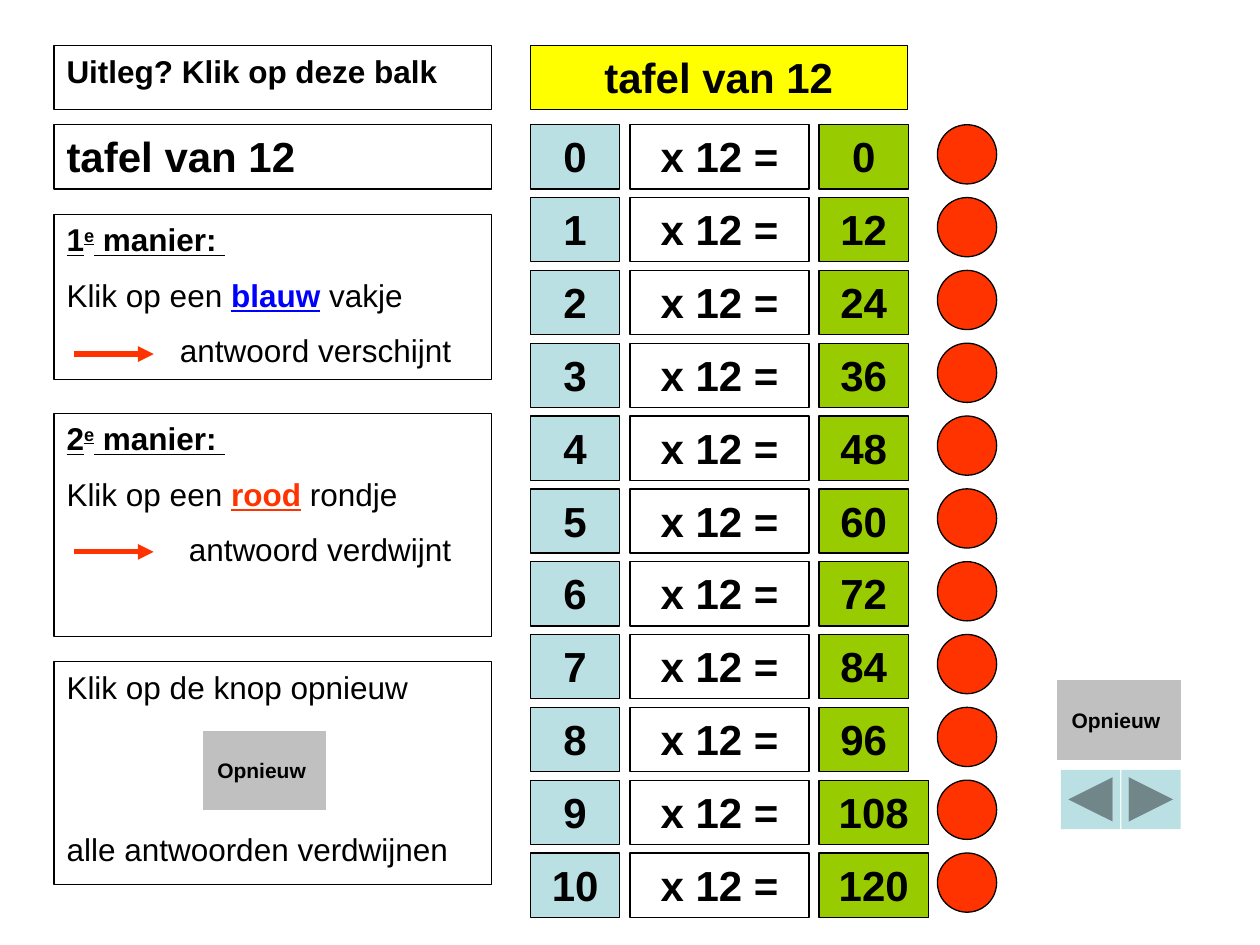
import pptx
import pptx.util
import pptx.dml.color
import pptx.enum.shapes
import pptx.enum.text
import pptx.oxml

Inches, Pt = pptx.util.Inches, pptx.util.Pt
KIND = pptx.enum.shapes.MSO_SHAPE
ALIGN = pptx.enum.text.PP_ALIGN
ANCHOR = pptx.enum.text.MSO_ANCHOR

COLORS = {"black": "000000", "white": "FFFFFF", "blue": "0000FF", "red": "FF3300",
          "green": "99CC00", "pale": "BBE0E3", "yellow": "FFFF00", "gray": "C0C0C0"}

TABLE = 12
HEAD = f"tafel van {TABLE}"
LEFT, WIDE = 0.43, 3.47
TOP, STEP, HIGH = 0.99, 0.578, 0.51
GAP = 10  # points between paragraphs
DOT = 0.47

# A paragraph is (indent in inches, space before in points, runs);
# a run is (text, marks, colour), with marks b, u and ^ for superscript.
def steps(number, word, color, noun, indent, result):
    return [(0, 0, [(number, "bu", "black"), ("e", "bu^", "black"),
                    (" manier: ", "bu", "black")]),
            (0, GAP, [("Klik op een ", "", "black"), (word, "bu", color),
                      (f" {noun}", "", "black")]),
            (indent, GAP, [(result, "", "black")])]


# top, height, text size, paragraphs
PANELS = [
    (0.36, HIGH, 18, [(0, 0, [("Uitleg? Klik op deze balk", "b", "black")])]),
    (TOP, HIGH, 24, [(0, 0, [(HEAD, "b", "black")])]),
    (1.7, 1.31, 18, steps("1", "blauw", "blue", "vakje", 0.9, "antwoord verschijnt")),
    (3.28, 1.77, 18, steps("2", "rood", "red", "rondje", 0.97, "antwoord verdwijnt")),
    (5.25, 1.77, 18, [(0, 0, [("Klik op de knop opnieuw", "", "black")]),
                      (0, 71, [("alle antwoorden verdwijnen", "", "black")])]),
]
ARROWS = [2.81, 4.38]
RESETS = [(1.61, 5.8), (8.39, 5.4)]
MOVES = [(8.42, KIND.ACTION_BUTTON_BACK_OR_PREVIOUS),
         (8.9, KIND.ACTION_BUTTON_FORWARD_OR_NEXT)]


def rgb(name):
    return pptx.dml.color.RGBColor.from_string(COLORS[name])


def paint(shape, fill, line="black"):
    if fill:
        shape.fill.solid()
        shape.fill.fore_color.rgb = rgb(fill)
    else:
        shape.fill.background()
    if line:
        shape.line.color.rgb = rgb(line)
        shape.line.width = Pt(0.75)
    else:
        shape.line.fill.background()


def style(run, size, marks="b", color="black"):
    font = run.font
    font.name, font.size = "Arial", Pt(size)
    font.bold, font.underline = "b" in marks, "u" in marks
    font.color.rgb = rgb(color)
    if "^" in marks:
        run._r.get_or_add_rPr().set("baseline", "30000")


def label(shape, text, size=24, anchor=ANCHOR.TOP):
    """Put one centred bold line in the shape."""
    frame = shape.text_frame
    frame.text = text
    frame.vertical_anchor = anchor
    frame.auto_size = pptx.enum.text.MSO_AUTO_SIZE.NONE
    frame.paragraphs[0].alignment = ALIGN.CENTER
    style(frame.paragraphs[0].runs[0], size)


def add(kind, x, y, w, h, fill, line="black"):
    shape = slide.shapes.add_shape(kind, Inches(x), Inches(y), Inches(w), Inches(h))
    shape.shadow.inherit = False
    paint(shape, fill, line)
    return shape


def panel(y, h, size, paras):
    frame = add(KIND.RECTANGLE, LEFT, y, WIDE, h, None).text_frame
    frame.word_wrap = True
    frame.vertical_anchor = ANCHOR.TOP
    for i, (indent, space, runs) in enumerate(paras):
        para = frame.add_paragraph() if i else frame.paragraphs[0]
        para.alignment = ALIGN.LEFT
        para.space_before = Pt(space)
        para._p.get_or_add_pPr().set("marL", str(Inches(indent)))
        for text, marks, color in runs:
            run = para.add_run()
            run.text = text
            style(run, size, marks, color)


def arrow(y):
    line = slide.shapes.add_connector(pptx.enum.shapes.MSO_CONNECTOR.STRAIGHT,
                                      Inches(0.59), Inches(y), Inches(1.22), Inches(y))
    line.line.color.rgb = rgb("red")
    line.line.width = Pt(3)
    space = pptx.oxml.ns.nsdecls("a")
    line.line._get_or_add_ln().append(
        pptx.oxml.parse_xml(f'<a:tailEnd {space} type="triangle"/>'))
    line._element.spPr.append(pptx.oxml.parse_xml(f"<a:effectLst {space}/>"))


deck = pptx.Presentation()
deck.slide_width, deck.slide_height = Inches(10), Inches(7.5)
slide = deck.slides.add_slide(deck.slide_layouts[5])

title = slide.shapes.title
title.left, title.top = Inches(4.21), Inches(0.36)
title.width, title.height = Inches(2.99), Inches(HIGH)
paint(title, "yellow")
label(title, HEAD)

for n in range(11):
    y = TOP + n * STEP
    answer = n * TABLE
    cells = [(4.21, 0.71, "pale", str(n)),
             (5, 1.42, "white", f"x {TABLE} ="),
             (6.5, 0.87 if answer > 99 else 0.71, "green", str(answer))]
    for x, w, fill, text in cells:
        label(add(KIND.RECTANGLE, x, y, w, HIGH, fill), text)
    add(KIND.OVAL, 7.44, y, DOT, DOT, "red")

for item in PANELS:
    panel(*item)
for y in ARROWS:
    arrow(y)
for x, y in RESETS:
    button = add(KIND.ACTION_BUTTON_CUSTOM, x, y, 0.98, 0.63, "gray", None)
    label(button, "Opnieuw ", 12, ANCHOR.MIDDLE)
    button.text_frame.word_wrap = False
for x, kind in MOVES:
    add(kind, x, 6.11, DOT, DOT, "pale", None)

deck.save("out.pptx")
